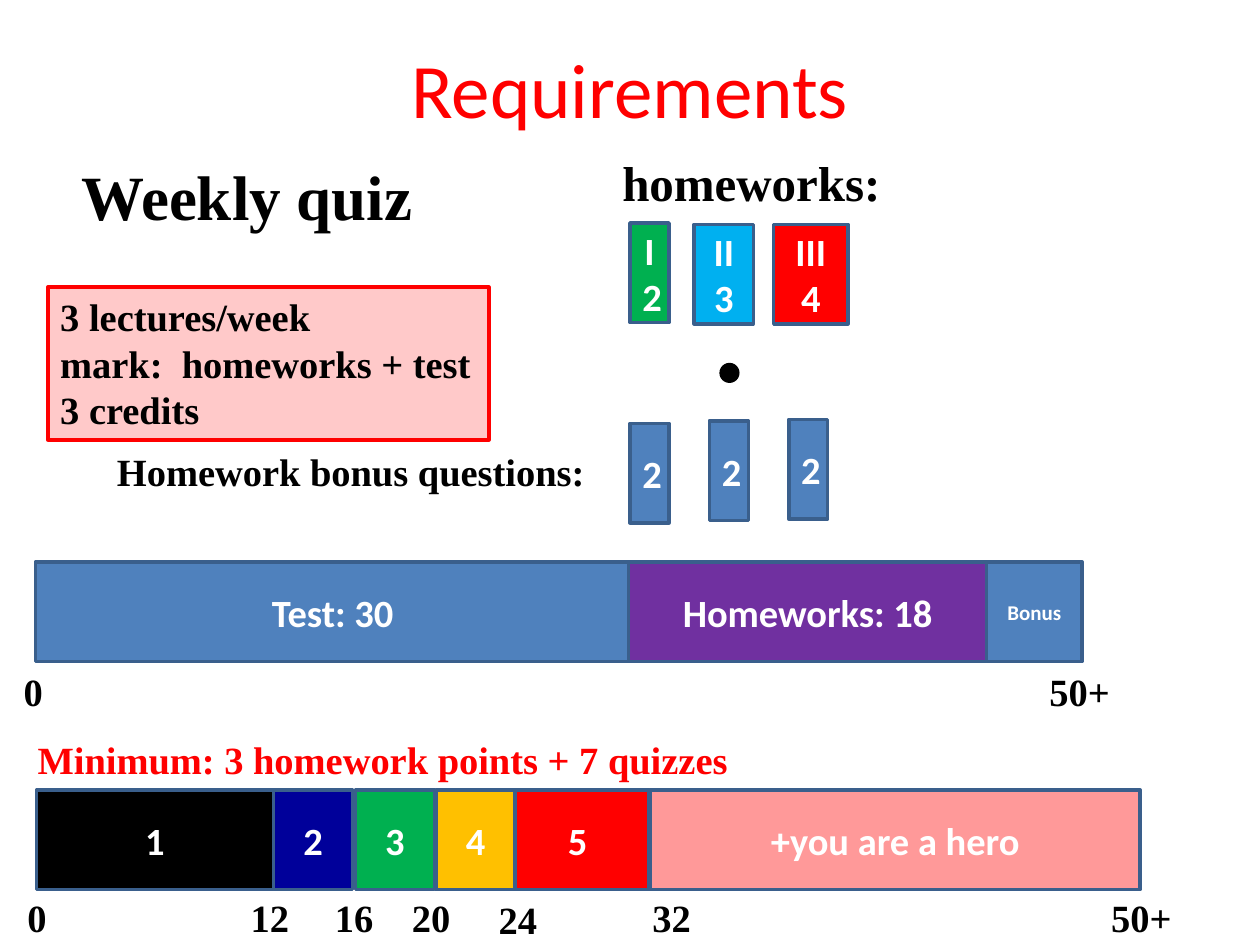
import pptx
import pptx.util
import pptx.dml.color
import pptx.enum.shapes
import pptx.enum.text
import pptx.oxml.ns
import lxml.etree

Inches = pptx.util.Inches
SHAPE = pptx.enum.shapes.MSO_SHAPE
ALIGN = pptx.enum.text.PP_ALIGN
ANCHOR = pptx.enum.text.MSO_ANCHOR

COLORS = {
    "black": "000000", "white": "FFFFFF", "red": "FF0000", "pink": "FF9999",
    "green": "00B050", "sky": "00B0F0", "blue": "4F81BD", "border": "3A5F8C",
    "purple": "7030A0", "navy": "00009A", "amber": "FFC000",
}
SERIF, SANS = "Times New Roman", "Calibri"
BLOCK_HEIGHT = 0.79
LABEL_HEIGHT = 0.47


def color(name):
    return pptx.dml.color.RGBColor.from_string(COLORS[name])


def write_lines(shape, text, font_color, align=ALIGN.LEFT, wrap=True,
                anchor=ANCHOR.TOP, **changes):
    """Put each line of text in its own paragraph, in one format."""
    font_format = {"size": 22, "name": SERIF, "bold": True} | changes
    font_format["size"] = pptx.util.Pt(font_format["size"])
    frame = shape.text_frame
    frame.word_wrap = wrap
    frame.vertical_anchor = anchor
    frame.text = text
    for paragraph in frame.paragraphs:
        paragraph.alignment = align
        for run in paragraph.runs:
            for key, value in font_format.items():
                setattr(run.font, key, value)
            run.font.color.rgb = color(font_color)


def add_text(slide, text, left, top, width, height=LABEL_HEIGHT,
             font_color="black", wrap=False, **changes):
    box = slide.shapes.add_textbox(*map(Inches, (left, top, width, height)))
    write_lines(box, text, font_color, wrap=wrap, **changes)


def add_filled(slide, kind, left, top, width, height, fill, line=None, line_width=2):
    shape = slide.shapes.add_shape(kind, *map(Inches, (left, top, width, height)))
    shape.shadow.inherit = False
    shape.fill.solid()
    shape.fill.fore_color.rgb = color(fill)
    if line:
        shape.line.color.rgb = color(line)
        shape.line.width = pptx.util.Pt(line_width)
    else:
        shape.line.fill.background()
    return shape


def add_block(slide, text, left, top, width, fill, size=22):
    block = add_filled(slide, SHAPE.RECTANGLE, left, top, width, BLOCK_HEIGHT, fill, "border")
    write_lines(block, text, "white", ALIGN.CENTER, anchor=ANCHOR.MIDDLE, name=SANS, size=size)


def add_course_facts(slide):
    box = add_filled(slide, SHAPE.RECTANGLE, 0.38, 2.28, 3.5, 1.21, "pink", "red", 2.25)
    write_lines(box, "3 lectures/week\nmark:  homeworks + test\n3 credits", "black", wrap=False)
    # Let the white background show through the fill
    fill_color = box.fill._xPr.find(".//" + pptx.oxml.ns.qn("a:srgbClr"))
    lxml.etree.SubElement(fill_color, pptx.oxml.ns.qn("a:alpha"), val="53000")


def main():
    presentation = pptx.Presentation()
    presentation.slide_width, presentation.slide_height = Inches(10), Inches(7.5)
    slide = presentation.slides.add_slide(presentation.slide_layouts[6])

    # Headings
    add_text(slide, "Requirements", 0.5, 0.07, 9, 1.25, "red", wrap=True, size=44,
             name=SANS, bold=False, align=ALIGN.CENTER, anchor=ANCHOR.MIDDLE)
    add_text(slide, "homeworks:", 4.84, 1.16, 2.28, 0.57, size=28)
    add_text(slide, "Weekly quiz", 0.55, 1.2, 2.98, 0.71, wrap=True, size=36)
    add_course_facts(slide)

    # Homeworks and their points
    for text, left, top, width, fill in (
            ("I\n2", 5, 1.77, 0.31, "green"),
            ("II\n3", 5.51, 1.78, 0.47, "sky"),
            ("III\n4", 6.14, 1.78, 0.59, "red")):
        add_block(slide, text, left, top, width, fill)
    add_filled(slide, SHAPE.OVAL, 5.71, 2.88, 0.16, 0.16, "black")

    # Bonus questions
    add_text(slide, "Homework bonus questions:", 0.83, 3.51, 3.96)
    for left, top in ((5, 3.36), (5.63, 3.34), (6.26, 3.33)):
        add_block(slide, "2", left, top, 0.31, "blue")

    # Bar of points by source
    for text, left, width, fill, size in (
            ("Test: 30", 0.28, 4.72, "blue", 22),
            ("Bonus", 7.83, 0.76, "blue", 12),
            ("Homeworks: 18", 4.99, 2.84, "purple", 22)):
        add_block(slide, text, left, 4.46, width, fill, size)

    # Bar of marks
    add_text(slide, "Minimum: 3 homework points + 7 quizzes", 0.2, 5.79, 5.75, font_color="red")
    for text, left, width, fill in (
            ("1", 0.29, 1.88, "black"),
            ("2", 2.17, 0.63, "navy"),
            ("3", 2.82, 0.63, "green"),
            ("4", 3.46, 0.63, "amber"),
            ("5 ", 4.09, 1.06, "red"),
            ("+you are a hero", 5.16, 3.89, "pink")):
        add_block(slide, text, left, 6.27, width, fill)

    # Scale labels under both bars
    label_widths = {1: 0.36, 2: 0.51, 3: 0.69}
    for text, left, top in (
            ("0", 0.09, 5.25), ("50+", 8.23, 5.25),
            ("0", 0.12, 7.05), ("12", 1.89, 7.05), ("16", 2.56, 7.05),
            ("20", 3.17, 7.05), ("24", 3.86, 7.06), ("32", 5.08, 7.05),
            ("50+", 8.72, 7.05)):
        add_text(slide, text, left, top, label_widths[len(text)])

    presentation.save("out.pptx")


if __name__ == "__main__":
    main()
